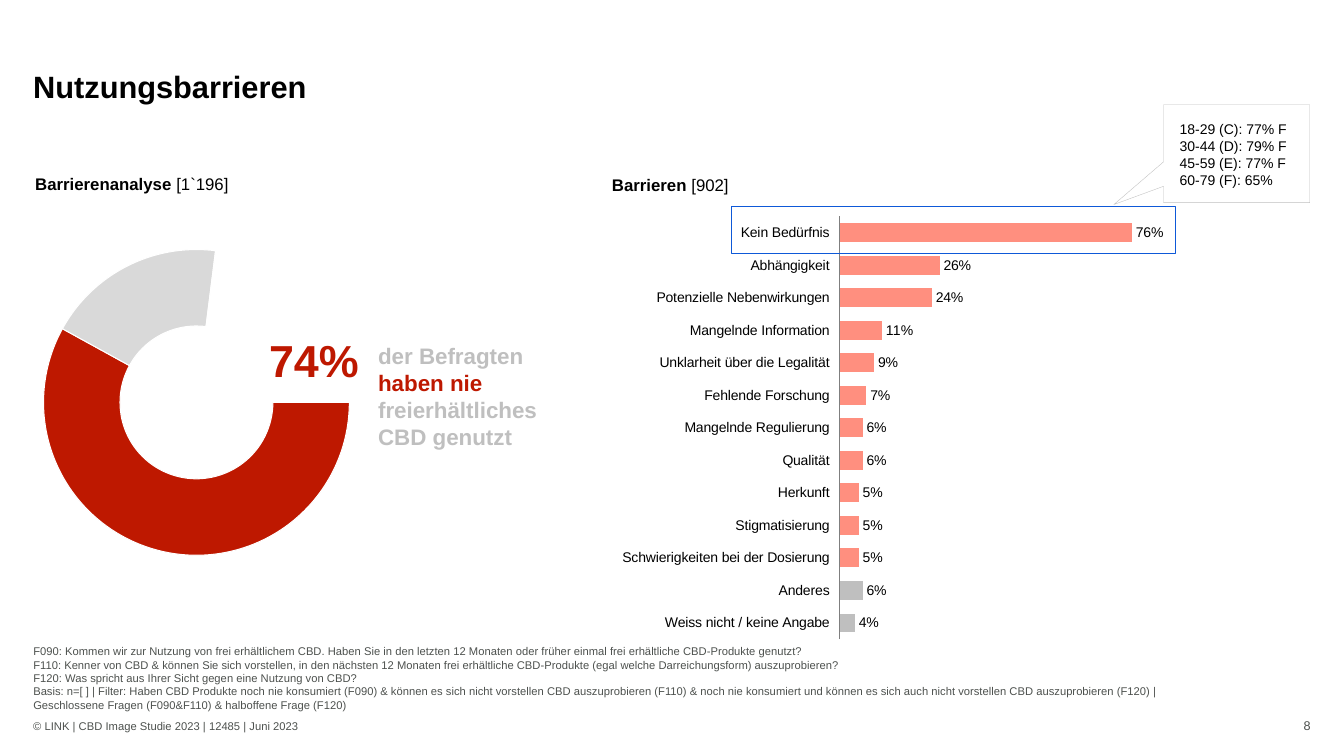
from dataclasses import dataclass

from lxml import etree
from pptx import Presentation
from pptx.chart.chart import Chart
from pptx.chart.data import CategoryChartData
from pptx.dml.color import RGBColor
from pptx.enum.chart import XL_CHART_TYPE, XL_LABEL_POSITION, XL_TICK_LABEL_POSITION, XL_TICK_MARK
from pptx.enum.shapes import MSO_SHAPE
from pptx.enum.text import MSO_ANCHOR, PP_ALIGN
from pptx.oxml.ns import qn
from pptx.shapes.autoshape import Shape
from pptx.util import Inches, Pt

DOUGHNUT = XL_CHART_TYPE.DOUGHNUT
BAR = XL_CHART_TYPE.BAR_CLUSTERED
OUTSIDE_END = XL_LABEL_POSITION.OUTSIDE_END
LABELS_LOW = XL_TICK_LABEL_POSITION.LOW
NO_TICK = XL_TICK_MARK.NONE
RECTANGLE = MSO_SHAPE.RECTANGLE
CALLOUT = MSO_SHAPE.RECTANGULAR_CALLOUT
TOP, MIDDLE, BOTTOM = MSO_ANCHOR.TOP, MSO_ANCHOR.MIDDLE, MSO_ANCHOR.BOTTOM
LEFT, RIGHT = PP_ALIGN.LEFT, PP_ALIGN.RIGHT

FONT = "Arial"
COLORS = {
    "black": "000000", "white": "FFFFFF", "red": "BE1800", "salmon": "FF8F7F",
    "light": "D9D9D9", "gray": "BFBFBF", "axis": "7F7F7F", "note": "4D514E",
    "blue": "0E59D8",
}

Frame = tuple[float, float, float, float]


@dataclass(frozen=True)
class Span:
    text: str
    color: str = "black"
    bold: bool = False


@dataclass(frozen=True)
class Label:
    frame: Frame
    size: float
    paras: list[list[Span]]
    anchor: MSO_ANCHOR = TOP
    align: PP_ALIGN = LEFT
    insets: Frame = (0, 0, 0, 0)


@dataclass(frozen=True)
class Barrier:
    name: str
    share: float
    color: str = "salmon"


@dataclass(frozen=True)
class Outline:
    kind: MSO_SHAPE
    frame: Frame
    color: str
    width: float


USAGE = [("1", 58, "red"), ("2", 19, "light"), ("", 23, None)]

BARRIERS = [
    Barrier("Kein Bedürfnis", 0.76),
    Barrier("Abhängigkeit", 0.26),
    Barrier("Potenzielle Nebenwirkungen", 0.24),
    Barrier("Mangelnde Information", 0.11),
    Barrier("Unklarheit über die Legalität", 0.09),
    Barrier("Fehlende Forschung", 0.07),
    Barrier("Mangelnde Regulierung", 0.06),
    Barrier("Qualität", 0.06),
    Barrier("Herkunft", 0.05),
    Barrier("Stigmatisierung", 0.05),
    Barrier("Schwierigkeiten bei der Dosierung", 0.05),
    Barrier("Anderes", 0.06, "gray"),
    Barrier("Weiss nicht / keine Angabe", 0.04, "gray"),
]

NOTES = [
    "F090: Kommen wir zur Nutzung von frei erhältlichem CBD. Haben Sie in den letzten 12 Monaten oder früher einmal frei erhältliche CBD-Produkte genutzt?",
    "F110: Kenner von CBD & können Sie sich vorstellen, in den nächsten 12 Monaten frei erhältliche CBD-Produkte (egal welche Darreichungsform) auszuprobieren?",
    "F120: Was spricht aus Ihrer Sicht gegen eine Nutzung von CBD?",
    "Basis: n=[ ] | Filter: Haben CBD Produkte noch nie konsumiert (F090) & können es sich nicht vorstellen CBD auszuprobieren (F110) & noch nie konsumiert und können es sich auch nicht vorstellen CBD auszuprobieren (F120) |",
    "Geschlossene Fragen (F090&F110) & halboffene Frage (F120)",
]

LABELS = [
    Label((0.33, 0.67, 12.67, 0.37), 22, [[Span("Nutzungsbarrieren", bold=True)]], BOTTOM),
    Label((0.33, 7.1, 10.3, 0.2), 8,
          [[Span("© LINK | CBD Image Studie 2023 | 12485 | Juni 2023", "note")]],
          MIDDLE, insets=(0, 0.05, 0.1, 0.05)),
    Label((12.02, 7.1, 0.98, 0.2), 9, [[Span("8", "note")]], MIDDLE, RIGHT, (0, 0.05, 0, 0.05)),
    Label((0.33, 6.75, 12.65, 0.31), 8, [[Span(note, "note")] for note in NOTES], BOTTOM),
    Label((6.07, 1.73, 6.24, 0.2), 12, [[Span("Barrieren ", bold=True), Span("[902]")]]),
    Label((3.75, 3.67, 1.98, 0.79), 16,
          [[Span("der Befragten", "gray", True)],
           [Span("haben nie ", "red", True), Span("freierhältliches CBD genutzt", "gray", True)]],
          BOTTOM),
    Label((2.57, 3.17, 1.73, 0.79), 32, [[Span("74%", "red", True)]], MIDDLE,
          insets=(0.1, 0.05, 0.1, 0.05)),
    Label((0.35, 1.72, 6.24, 0.2), 12, [[Span("Barrierenanalyse ", bold=True), Span("[1`196]")]]),
]

HIGHLIGHT = Outline(RECTANGLE, (7.26, 2.05, 4.4, 0.47), "blue", 0.75)
AGE_CALLOUT = Outline(CALLOUT, (11.54, 1.04, 1.45, 0.97), "gray", 0.25)
AGE_LABEL = Label(AGE_CALLOUT.frame, 10,
                  [[Span(line)] for line in ("18-29 (C): 77% F", "30-44 (D): 79% F",
                                             "45-59 (E): 77% F", "60-79 (F): 65%")],
                  insets=(0.16, 0.16, 0, 0))


def rgb(name: str) -> RGBColor:
    return RGBColor.from_string(COLORS[name])


def inches(frame: Frame) -> list[Inches]:
    return [Inches(length) for length in frame]


def write_label(box: Shape, label: Label) -> None:
    text_frame = box.text_frame
    text_frame.word_wrap = True
    text_frame.vertical_anchor = label.anchor
    (text_frame.margin_left, text_frame.margin_top,
     text_frame.margin_right, text_frame.margin_bottom) = inches(label.insets)
    for index, spans in enumerate(label.paras):
        para = text_frame.add_paragraph() if index else text_frame.paragraphs[0]
        para.alignment = label.align
        for span in spans:
            run = para.add_run()
            run.text = span.text
            run.font.name = FONT
            run.font.size = Pt(label.size)
            run.font.bold = span.bold
            run.font.color.rgb = rgb(span.color)


def add_outline(page, outline: Outline) -> Shape:
    shape = page.shapes.add_shape(outline.kind, *inches(outline.frame))
    shape.shadow.inherit = False
    shape.fill.background()
    shape.line.color.rgb = rgb(outline.color)
    shape.line.width = Pt(outline.width)
    return shape


def add_plain_chart(page, kind: XL_CHART_TYPE, frame: Frame, plot_frame: Frame,
                    names: list[str], values: list[float], number_format: str) -> Chart:
    data = CategoryChartData(number_format=number_format)
    data.categories = names
    data.add_series("Series 1", values)
    chart = page.shapes.add_chart(kind, *inches(frame), data).chart
    chart.has_legend = False
    chart.has_title = False
    chart.font.name = FONT
    chart.font.size = Pt(10)
    chart.font.color.rgb = rgb("black")
    plot_area = chart.element.find(".//" + qn("c:plotArea"))
    for layout in plot_area.findall(qn("c:layout")):
        plot_area.remove(layout)
    layout = etree.Element(qn("c:layout"))
    manual = etree.SubElement(layout, qn("c:manualLayout"))
    settings = [("layoutTarget", "inner"), ("xMode", "edge"), ("yMode", "edge"),
                *zip("xywh", plot_frame)]
    for tag, value in settings:
        etree.SubElement(manual, qn(f"c:{tag}")).set("val", str(value))
    plot_area.insert(0, layout)
    return chart


def add_usage_ring(page) -> None:
    names, values, colors = zip(*USAGE)
    chart = add_plain_chart(page, DOUGHNUT, (0.33, 1.57, 6.25, 5.09),
                            (0.016, 0.178, 0.486, 0.596), names, values, "General")
    chart.element.find(".//" + qn("c:firstSliceAng")).set("val", "90")
    for index, color in enumerate(colors):
        point = chart.plots[0].series[0].points[index].format
        point.line.color.rgb = rgb("white")
        point.line.width = Pt(0.75)
        if color:
            point.fill.solid()
            point.fill.fore_color.rgb = rgb(color)
        else:
            point.fill.background()


def add_barrier_bars(page) -> None:
    chart = add_plain_chart(page, BAR, (6.05, 1.68, 6.94, 5.09), (0.328, 0.092, 0.55, 0.824),
                            [barrier.name for barrier in BARRIERS],
                            [barrier.share for barrier in BARRIERS], "0%")
    names, scale = chart.category_axis, chart.value_axis
    names.reverse_order = True
    names.major_tick_mark = NO_TICK
    names.tick_label_position = LABELS_LOW
    names.format.line.color.rgb = rgb("axis")
    scale.minimum_scale, scale.maximum_scale, scale.major_unit = 0, 1, 0.2
    scale.has_major_gridlines = False
    scale.visible = False
    plot = chart.plots[0]
    plot.gap_width = 73
    plot.vary_by_categories = False
    plot.has_data_labels = True
    labels = plot.data_labels
    labels.show_value = True
    labels.number_format, labels.number_format_is_linked = "0%", False
    labels.position = OUTSIDE_END
    series = plot.series[0]
    series.format.fill.solid()
    series.format.fill.fore_color.rgb = rgb("salmon")
    for index, barrier in enumerate(BARRIERS):
        if barrier.color != "salmon":
            fill = series.points[index].format.fill
            fill.solid()
            fill.fore_color.rgb = rgb(barrier.color)


def main() -> None:
    deck = Presentation()
    deck.slide_width, deck.slide_height = Inches(13.33), Inches(7.5)
    page = deck.slides.add_slide(deck.slide_layouts[6])
    add_usage_ring(page)
    add_barrier_bars(page)
    for label in LABELS:
        write_label(page.shapes.add_textbox(*inches(label.frame)), label)
    add_outline(page, HIGHLIGHT)
    callout = add_outline(page, AGE_CALLOUT)
    callout.adjustments[0], callout.adjustments[1] = -0.84, 0.52
    write_label(callout, AGE_LABEL)
    deck.save("out.pptx")


if __name__ == "__main__":
    main()
